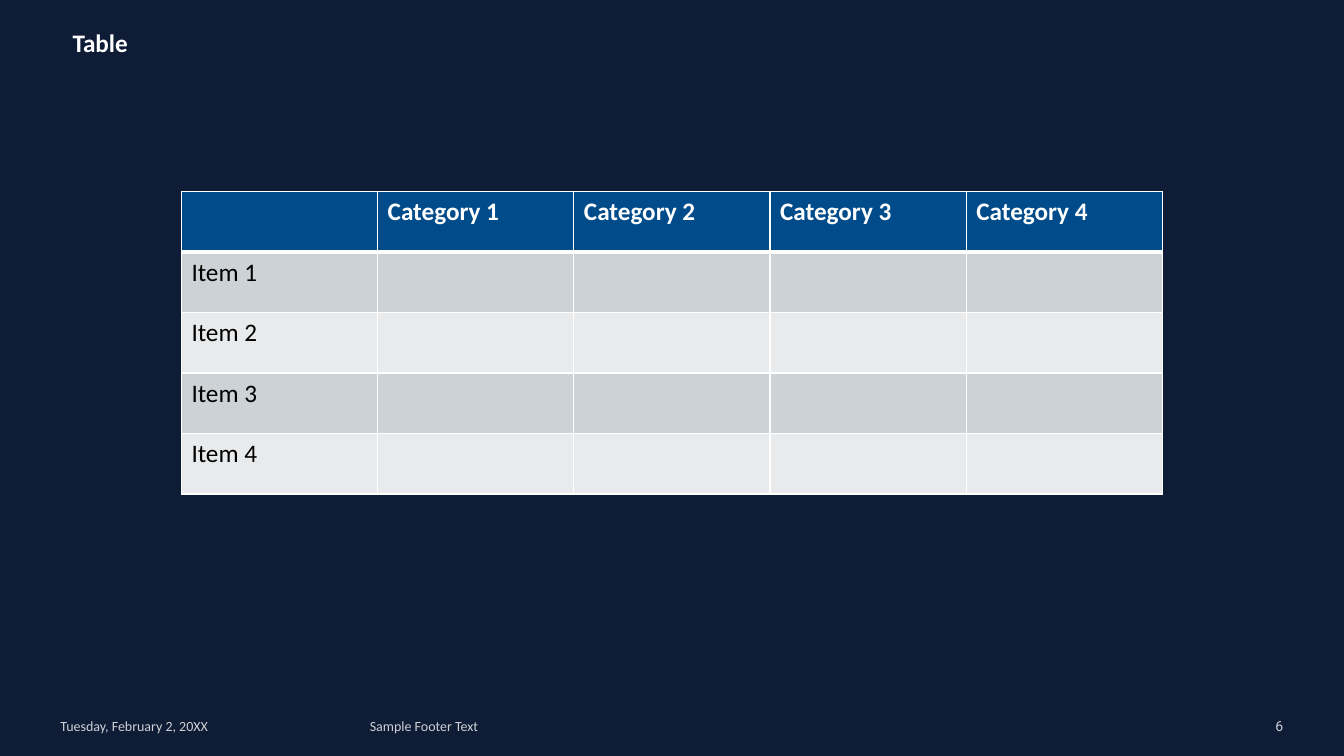
from lxml import etree
from pptx import Presentation
from pptx.dml.color import RGBColor
from pptx.enum import text
from pptx.oxml import ns
from pptx.util import Pt

# Content
TITLE = "Table"
HEADERS = ["", "Category 1", "Category 2", "Category 3", "Category 4"]
ITEMS = ["Item 1", "Item 2", "Item 3", "Item 4"]
LEFT, RIGHT = text.PP_ALIGN.LEFT, text.PP_ALIGN.RIGHT
FOOTERS = [  # wording, left, width, font, alignment
    ("Tuesday, February 2, 20XX", 43.2, 207.4, "Calibri", LEFT),
    ("Sample Footer Text", 264.2, 502.6, "Calibri", LEFT),
    ("6", 783.4, 133.2, "Roboto", RIGHT),
]
COLORS = {"back": "0F1C35", "header": "004B89", "odd": "CDD2D6",
          "even": "E8EAEC", "light": "FFFFFF", "dark": "000000"}

# Layout
SLIDE_W, SLIDE_H = 960, 540
COL_W, ROW_H, TABLE_TOP = 140.16, 43.2, 136.8
FOOTER_TOP, FOOTER_H = 512.6, 12.2


def rgb(name):
    return RGBColor.from_string(COLORS[name])


def style(p, size, color, font="Calibri", bold=False):
    p.font.size, p.font.name, p.font.bold = Pt(size), font, bold
    p.font.color.rgb = rgb(color)


def set_borders(cell, top, bottom):
    tcPr = cell._tc.get_or_add_tcPr()
    sides = [("lnL", 1), ("lnR", 1), ("lnT", top), ("lnB", bottom)]
    for i, (side, width) in enumerate(sides):
        ln = etree.Element(ns.qn("a:" + side), w=str(Pt(width)))
        fill = etree.SubElement(ln, ns.qn("a:solidFill"))
        etree.SubElement(fill, ns.qn("a:srgbClr"), val=COLORS["light"])
        tcPr.insert(i, ln)


prs = Presentation()
prs.slide_width, prs.slide_height = Pt(SLIDE_W), Pt(SLIDE_H)
s = prs.slides.add_slide(prs.slide_layouts[5])
s.background.fill.solid()
s.background.fill.fore_color.rgb = rgb("back")

# Title
title = s.shapes.title
title.left, title.top, title.width, title.height = Pt(44.6), Pt(15.8), Pt(62), Pt(51)
tf = title.text_frame
tf.text = TITLE
tf.word_wrap = False
tf.auto_size = text.MSO_AUTO_SIZE.NONE
tf.vertical_anchor = text.MSO_ANCHOR.TOP
tf.paragraphs[0].alignment = LEFT
style(tf.paragraphs[0], 18, "light", bold=True)

# Table, centred across the slide
rows = [HEADERS] + [[item] + [""] * (len(HEADERS) - 1) for item in ITEMS]
table_w = COL_W * len(HEADERS)
table = s.shapes.add_table(len(rows), len(HEADERS), Pt((SLIDE_W - table_w) / 2),
                           Pt(TABLE_TOP), Pt(table_w), Pt(ROW_H * len(rows))).table
for col in table.columns:
    col.width = Pt(COL_W)
for r, row in enumerate(rows):
    table.rows[r].height = Pt(ROW_H)
    header = r == 0
    fill = "header" if header else "odd" if r % 2 else "even"
    for c, words in enumerate(row):
        cell = table.cell(r, c)
        cell.text = words
        cell.fill.solid()
        cell.fill.fore_color.rgb = rgb(fill)
        set_borders(cell, top=3 if r == 1 else 1, bottom=3 if header else 1)
        style(cell.text_frame.paragraphs[0], 18, "light" if header else "dark", bold=header)

# Footer line at 80 % opacity
for words, left, width, font, align in FOOTERS:
    tf = s.shapes.add_textbox(Pt(left), Pt(FOOTER_TOP), Pt(width), Pt(FOOTER_H)).text_frame
    tf.margin_left = tf.margin_right = tf.margin_top = tf.margin_bottom = 0
    tf.word_wrap = True
    tf.vertical_anchor = text.MSO_ANCHOR.MIDDLE
    p = tf.paragraphs[0]
    p.text, p.alignment = words, align
    style(p, 10, "light", font)
    for clr in p._p.iter(ns.qn("a:srgbClr")):
        etree.SubElement(clr, ns.qn("a:alpha"), val="80000")

prs.save("out.pptx")
